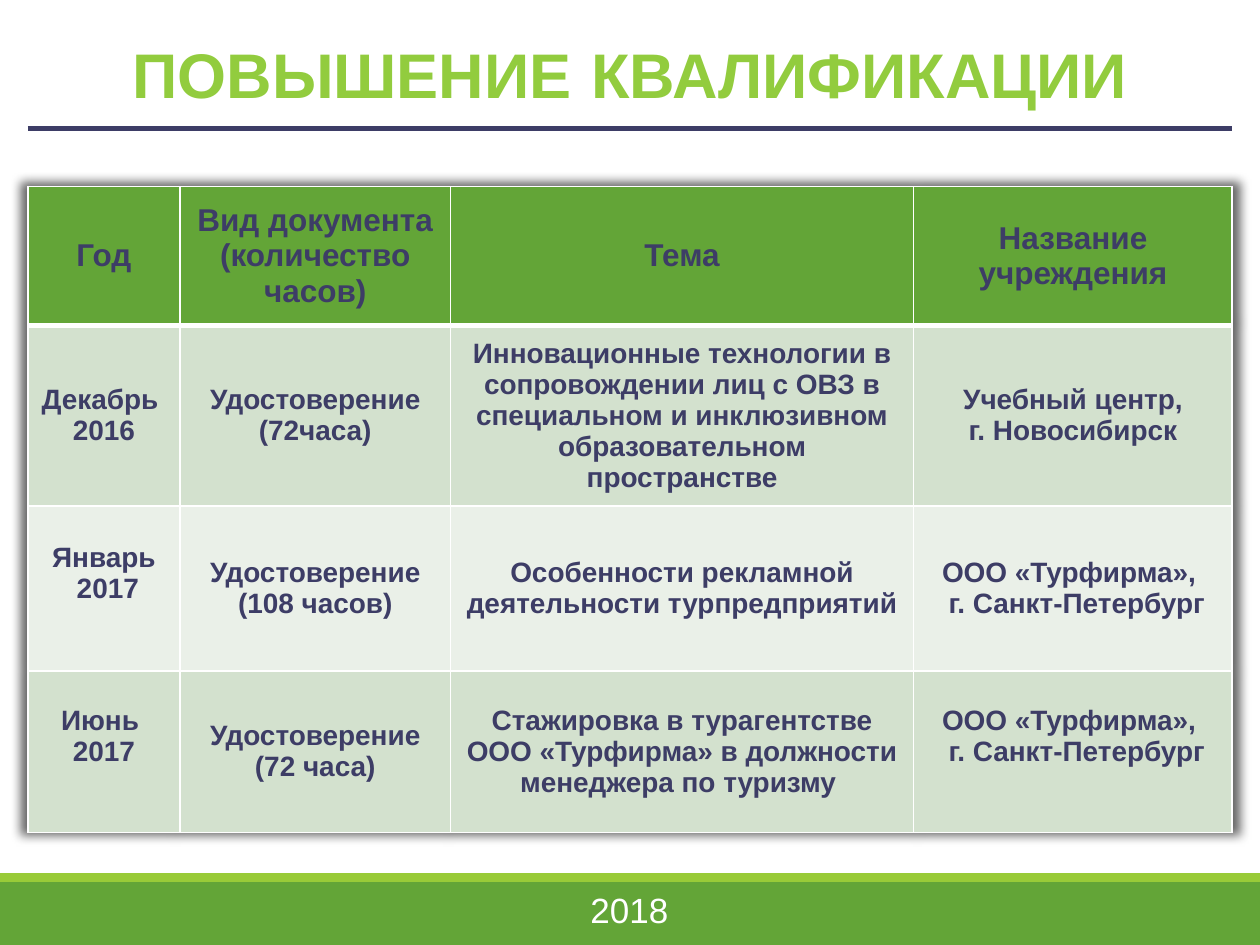
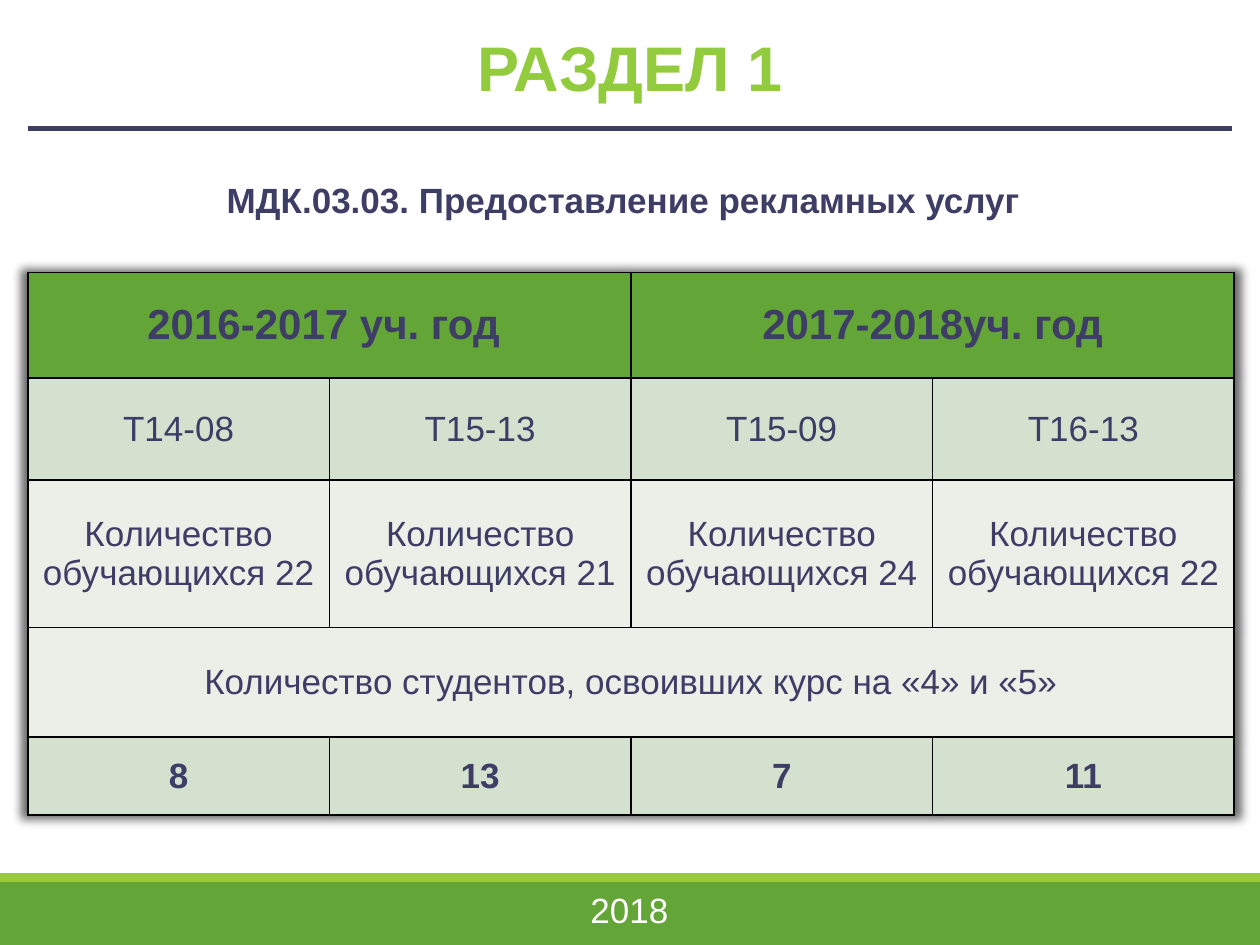
from dataclasses import dataclass

import lxml.etree
import pptx
import pptx.dml.color
import pptx.enum.shapes
import pptx.enum.text
import pptx.oxml
import pptx.oxml.ns
import pptx.util
from pptx.util import Cm

NAMESPACE = pptx.oxml.ns.nsdecls("a")


@dataclass(frozen=True)
class Theme:
    font: str = "Arial"
    ink: str = "3D3D66"
    white: str = "FFFFFF"
    black: str = "000000"
    green: str = "63A537"
    lime: str = "99CB38"
    row_dark: str = "D3E1CE"
    row_light: str = "EAF0E8"
    title_gradient: tuple = (
        (0, "A6D66A"), (49, "92CC3E"), (50, "85BB1C"), (92, "75A11F"), (100, "739E1E"))
    title_size: int = 36
    title_gap_size: int = 40
    year_size: int = 24
    body_size: int = 20
    header_size: int = 18
    cell_size: int = 16


def rgb(color):
    return pptx.dml.color.RGBColor.from_string(color)


def gradient_fill(run, stops):
    """Fill the letters of a run with a vertical gradient."""
    marks = "".join(
        f'<a:gs pos="{percent * 1000}"><a:srgbClr val="{color}"/></a:gs>'
        for percent, color in stops)
    run._r.get_or_add_rPr().insert(0, pptx.oxml.parse_xml(
        f'<a:gradFill {NAMESPACE}><a:gsLst>{marks}</a:gsLst>'
        '<a:lin ang="5400000" scaled="0"/></a:gradFill>'))


def write(frame, text, *, size, font, color=None, gradient=None, bold=False, spacing=None):
    """Write centred text; each line is a string or a list of (text, size) runs."""
    lines = text.split("\n") if isinstance(text, str) else text
    for index, line in enumerate(lines):
        paragraph = frame.paragraphs[0] if index == 0 else frame.add_paragraph()
        paragraph.alignment = pptx.enum.text.PP_ALIGN.CENTER
        if spacing:
            paragraph.line_spacing = spacing
        for words, points in [(line, size)] if isinstance(line, str) else line:
            run = paragraph.add_run()
            run.text = words
            run.font.name = font
            run.font.size = pptx.util.Pt(points)
            run.font.bold = bold
            if gradient:
                gradient_fill(run, gradient)
            else:
                run.font.color.rgb = rgb(color)


def set_borders(cell, color, bottom_width):
    properties = cell._tc.get_or_add_tcPr()
    for side in "LRTB":
        width = pptx.util.Pt(bottom_width if side == "B" else 1)
        properties.append(pptx.oxml.parse_xml(
            f'<a:ln{side} {NAMESPACE} w="{width}"><a:solidFill>'
            f'<a:srgbClr val="{color}"/></a:solidFill></a:ln{side}>'))


def add_glow_shadow(table):
    table._tbl.tblPr.insert(0, pptx.oxml.parse_xml(
        f'<a:effectLst {NAMESPACE}><a:outerShdw blurRad="{Cm(0.2)}" sx="101000" sy="101000" '
        'algn="ctr" rotWithShape="0"><a:srgbClr val="000000"><a:alpha val="60000"/>'
        '</a:srgbClr></a:outerShdw></a:effectLst>'))


class Deck:
    LEFT, RIGHT = Cm(0.56), Cm(24.84)

    def __init__(self, theme):
        self.theme = theme
        self.presentation = pptx.Presentation()
        self.presentation.slide_width = Cm(25.4)
        self.presentation.slide_height = Cm(19.05)
        self.slide = None

    def start_slide(self, title, title_height):
        """Open a slide with the shared footer, title and rule."""
        theme = self.theme
        self.slide = self.presentation.slides.add_slide(self.presentation.slide_layouts[6])
        self.band(Cm(17.78), Cm(1.27), theme.green)
        self.band(Cm(17.6), Cm(0.18), theme.lime)
        self.text("2018", Cm(11.6), Cm(17.78), Cm(2.18), Cm(1.12),
                  size=theme.body_size, color=theme.white)
        self.text(title, 0, Cm(0.46), self.presentation.slide_width, title_height,
                  size=theme.title_size, gradient=theme.title_gradient, bold=True)
        self.rule(Cm(2.59))

    def band(self, top, height, color):
        band = self.slide.shapes.add_shape(
            pptx.enum.shapes.MSO_SHAPE.RECTANGLE,
            0, top, self.presentation.slide_width, height)
        band.shadow.inherit = False
        band.fill.solid()
        band.fill.fore_color.rgb = rgb(color)
        band.line.fill.background()

    def text(self, text, left, top, width, height, **style):
        frame = self.slide.shapes.add_textbox(left, top, width, height).text_frame
        frame.word_wrap = True
        write(frame, text, font=self.theme.font, **style)

    def rule(self, top):
        rule = self.slide.shapes.add_connector(
            pptx.enum.shapes.MSO_CONNECTOR.STRAIGHT, self.LEFT, top, self.RIGHT, top)
        rule.line.color.rgb = rgb(self.theme.ink)
        rule.line.width = pptx.util.Pt(3)
        lxml.etree.SubElement(rule._element.spPr, pptx.oxml.ns.qn("a:effectLst"))

    def table(self, rows, top, widths, heights, fills, styles, border,
              header_rule=1, raised=()):
        """Add a table; None joins a cell to its left neighbour, raised cells sit higher."""
        table = self.slide.shapes.add_table(
            len(rows), len(widths), self.LEFT, top, Cm(sum(widths)), Cm(sum(heights))).table
        table.first_row = table.horz_banding = False
        add_glow_shadow(table)
        for column, width in zip(table.columns, widths):
            column.width = Cm(width)
        for row, height in zip(table.rows, heights):
            row.height = Cm(height)
        for r, (texts, fill, style) in enumerate(zip(rows, fills, styles)):
            for c, text in enumerate(texts):
                cell = table.cell(r, c)
                set_borders(cell, border, header_rule if r == 0 else 1)
                cell.fill.solid()
                cell.fill.fore_color.rgb = rgb(fill)
                cell.vertical_anchor = pptx.enum.text.MSO_ANCHOR.MIDDLE
                if (r, c) in raised:
                    cell.margin_bottom = Cm(0.75)
                if text is None:
                    continue
                end = c
                while end + 1 < len(texts) and texts[end + 1] is None:
                    end += 1
                if end > c:
                    cell.merge(table.cell(r, end))
                write(cell.text_frame, text, font=self.theme.font,
                      color=self.theme.ink, **style)


def add_training_slide(deck):
    theme = deck.theme
    deck.start_slide([[("ПОВЫШЕНИЕ", theme.title_size), (" ", theme.title_gap_size),
                       ("КВАЛИФИКАЦИИ", theme.title_size)]], Cm(1.96))
    agency = "ООО «Турфирма», \n г. Санкт-Петербург"
    courses = [
        ["Год", "Вид документа\n(количество часов)", "Тема", "Название учреждения"],
        ["Декабрь \n2016", "Удостоверение\n(72часа)",
         "Инновационные технологии в сопровождении лиц с ОВЗ в специальном "
         "и инклюзивном образовательном пространстве",
         "Учебный центр,\nг. Новосибирск"],
        ["Январь\n 2017", "Удостоверение\n(108 часов)",
         "Особенности рекламной деятельности турпредприятий", agency],
        ["Июнь \n2017", "Удостоверение\n(72 часа)",
         "Стажировка в турагентстве ООО «Турфирма» в должности менеджера по туризму ",
         agency],
    ]
    header = {"size": theme.header_size, "bold": True}
    course = {"size": theme.cell_size, "bold": True}
    deck.table(courses, Cm(3.76), [3.07, 5.45, 9.34, 6.42], [2.8, 3.63, 3.33, 3.25],
               [theme.green, theme.row_dark, theme.row_light, theme.row_dark],
               [header] + [course] * 3, theme.white, header_rule=3,
               raised={(2, 0), (3, 0), (3, 3)})


def add_section_slide(deck):
    theme = deck.theme
    deck.start_slide("РАЗДЕЛ 1", Cm(1.8))
    deck.text("МДК.03.03. Предоставление рекламных услуг ", deck.LEFT, Cm(3.61),
              Cm(24.21), Cm(1.37), size=theme.body_size, color=theme.ink,
              bold=True, spacing=0.85)
    groups = [
        ["2016-2017 уч. год ", None, "2017-2018уч. год", None],
        ["Т14-08", "Т15-13", "Т15-09", "Т16-13"],
        [f"Количество обучающихся {count}" for count in (22, 21, 24, 22)],
        ["Количество студентов, освоивших курс на «4» и «5»", None, None, None],
        ["8", "13", "7", "11"],
    ]
    year = {"size": theme.year_size, "bold": True}
    plain = {"size": theme.body_size}
    result = {"size": theme.body_size, "bold": True}
    deck.table(groups, Cm(5.49), [6.08] * 4, [2.13, 2.06, 2.97, 2.21, 1.57],
               [theme.green, theme.row_dark, theme.row_light, theme.row_light, theme.row_dark],
               [year, plain, plain, plain, result], theme.black)


def main():
    deck = Deck(Theme())
    add_training_slide(deck)
    add_section_slide(deck)
    deck.presentation.save("out.pptx")


if __name__ == "__main__":
    main()
